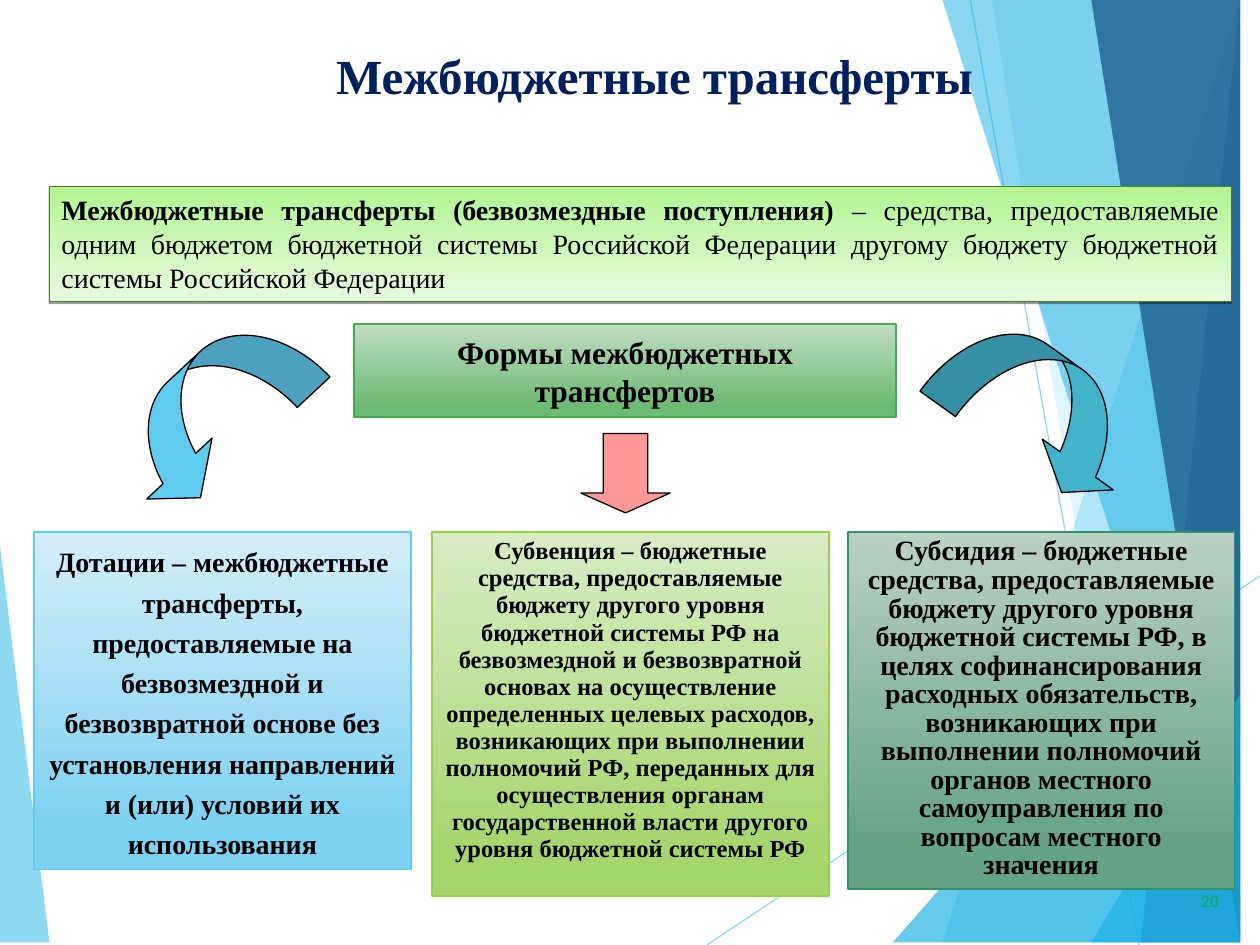
"""Build the slide on inter-budget transfers."""
from lxml import etree
from pptx import Presentation
from pptx.dml.color import RGBColor
from pptx.enum import shapes, text
from pptx.oxml.ns import qn
from pptx.util import Cm, Pt

SERIF = "Times New Roman"
W, H = 25.4, 19.05
TOP, LOW = (W, 0), (W, H)
HEX = {
    "sky": "5FCBEF", "azure": "17B0E4", "blue": "2E83C3", "deep": "226292",
    "navy": "002060", "black": "000000", "teal": "41B4CB", "pink": "FF9999",
    "green": "00B050", "lime0": "B2F591", "lime1": "E7FADF", "olive": "4A801E",
    "leaf0": "C0DDC2", "leaf1": "6DBA74", "leaf": "42B051",
    "ice0": "D4EEF9", "ice1": "7DD1F1",
    "grass0": "D8ECC5", "grass1": "A5D66C", "grass": "96D141",
    "sage0": "BAD1C4", "sage1": "65A385", "sage": "2E946B",
}
RAYS = [((14.25, H), (W, 11.61)), ((19.56, 0), (22.96, H))]
SHARDS = [
    ("sky", 70, [(0, 11.15), (1.24, H), (0, H)]),
    ("sky", 36, [(24.77, 0), (19.15, H), LOW, TOP]),
    ("sky", 20, [(20.02, 0), (23.34, H), LOW, TOP]),
    ("azure", 66, [(18.44, H), (W, 10.9), LOW]),
    ("azure", 50, [(19.48, 0), (24.64, H), LOW, TOP]),
    ("blue", 70, [(24.92, 0), (23.04, H), LOW, TOP]),
    ("deep", 82, [(22.48, 0), (25.1, H), LOW, TOP]),
    ("azure", 66, [(22.4, H), (W, 13.59), LOW]),
]
TITLE = "Межбюджетные трансферты"
TERM = [
    ("Межбюджетные трансферты (безвозмездные поступления) ", True),
    ("– средства, предоставляемые одним бюджетом бюджетной системы Российской "
     "Федерации другому бюджету бюджетной системы Российской Федерации", False),
]
FORMS = [("Формы межбюджетных трансфертов", True)]
ROW = 10.72
CARDS = [
    ((0.69, ROW, 7.59, 6.81), ("ice0", "ice1", "sky"), 16, 1.2,
     "Дотации – межбюджетные трансферты, предоставляемые на безвозмездной и "
     "безвозвратной основе без установления направлений и (или) условий их "
     "использования"),
    ((8.71, ROW, 8, 7.34), ("grass0", "grass1", "grass"), 14, 0.92,
     "Субвенция – бюджетные средства, предоставляемые бюджету другого уровня "
     "бюджетной системы РФ на безвозмездной и безвозвратной основах на "
     "осуществление определенных целевых расходов, возникающих при выполнении "
     "полномочий РФ, переданных для осуществления органам государственной "
     "власти другого уровня бюджетной системы РФ"),
    ((17.09, ROW, 7.8, 7.21), ("sage0", "sage1", "sage"), 16, 0.85,
     "Субсидия – бюджетные средства, предоставляемые бюджету другого уровня "
     "бюджетной системы РФ, в целях софинансирования расходных обязательств, "
     "возникающих при выполнении полномочий органов местного самоуправления по "
     "вопросам местного значения"),
]
KIND = shapes.MSO_SHAPE
ARROWS = [
    (KIND.CURVED_RIGHT_ARROW, (3.2, 6.1, 2.16, 4.47), 47, "sky",
     (0.417, 0.834, 0.333)),
    (KIND.CURVED_LEFT_ARROW, (19.86, 6.05, 2.26, 4.39), 305.6, "teal",
     (0.389, 0.778, 0.288)),
    (KIND.DOWN_ARROW, (11.71, 8.74, 1.8, 1.6), 0, "pink", (0.5, 0.25)),
]
MID, TOPS = text.MSO_ANCHOR.MIDDLE, text.MSO_ANCHOR.TOP
ALIGN = text.PP_ALIGN


def rgb(name):
    return RGBColor.from_string(HEX[name])


def cms(box):
    return [Cm(v) for v in box]


def fade(fill, part):
    tone = fill.find(".//" + qn("a:srgbClr"))
    etree.SubElement(tone, qn("a:alpha"), val=str(part * 1000))


def stroke(line, tone, width):
    line.color.rgb = rgb(tone)
    line.width = Pt(width)


def write(shape, runs, size, tone="black", font=SERIF, align=ALIGN.CENTER,
          anchor=TOPS, space=None):
    frame = shape.text_frame
    frame.word_wrap = True
    frame.auto_size = text.MSO_AUTO_SIZE.NONE
    frame.vertical_anchor = anchor
    frame.margin_left = frame.margin_right = Cm(0.25)
    frame.margin_top = frame.margin_bottom = Cm(0.13)
    para = frame.paragraphs[0]
    para.alignment = align
    para.line_spacing = space
    for words, bold in runs:
        run = para.add_run()
        run.text = words
        run.font.size, run.font.name, run.font.bold = Pt(size), font, bold
        run.font.color.rgb = rgb(tone)


def panel(slide, box, tones, end, width=1):
    shape = slide.shapes.add_shape(KIND.RECTANGLE, *cms(box))
    shape.shadow.inherit = False
    shape.fill.gradient()
    shape.fill.gradient_angle = 270
    for stop, tone, spot in zip(shape.fill.gradient_stops, tones, (0, end)):
        stop.color.rgb = rgb(tone)
        stop.position = spot
    stroke(shape.line, tones[2], width)
    return shape


def backdrop(slide):
    for start, stop in RAYS:
        ray = slide.shapes.add_connector(
            shapes.MSO_CONNECTOR.STRAIGHT, *cms(start + stop))
        stroke(ray.line, "sky", 0.75)
        props = ray._element.spPr
        fade(props, 70)
        etree.SubElement(props, qn("a:effectLst"))
    for tone, part, spots in SHARDS:
        pen = slide.shapes.build_freeform(*spots[0], scale=Cm(1))
        pen.add_line_segments(spots[1:], close=True)
        shard = pen.convert_to_shape()
        shard.shadow.inherit = False
        shard.fill.solid()
        shard.fill.fore_color.rgb = rgb(tone)
        fade(shard._element.spPr, part)
        shard.line.fill.background()


def drop(shape):
    glow = etree.SubElement(
        shape._element.spPr.find(qn("a:effectLst")), qn("a:outerShdw"),
        blurRad="0", dist=str(Pt(1.6)), dir="5400000", rotWithShape="0")
    tone = etree.SubElement(glow, qn("a:srgbClr"), val=HEX["black"])
    etree.SubElement(tone, qn("a:alpha"), val="38000")


def main():
    deck = Presentation()
    deck.slide_width, deck.slide_height = Cm(W), Cm(H)
    slide = deck.slides.add_slide(deck.slide_layouts[5])
    backdrop(slide)

    title = slide.shapes.title
    slide.shapes._spTree.append(title._element)
    title.left, title.top, title.width, title.height = cms(
        (3.38, 0.79, 19.63, 1.45))
    write(title, [(TITLE, True)], 28, "navy", anchor=MID)

    term = panel(slide, (0.99, 3.76, 23.83, 2.31),
                 ("lime0", "lime1", "olive"), 1, 0.5)
    drop(term)
    write(term, TERM, 16, align=ALIGN.JUSTIFY)

    forms = panel(slide, (7.14, 6.53, 10.92, 1.88),
                  ("leaf0", "leaf1", "leaf"), 0.88)
    write(forms, FORMS, 18, anchor=MID)

    for kind, box, turn, tone, bends in ARROWS:
        arrow = slide.shapes.add_shape(kind, *cms(box))
        arrow.shadow.inherit = False
        arrow.rotation = turn
        for i, bend in enumerate(bends):
            arrow.adjustments[i] = bend
        arrow.fill.solid()
        arrow.fill.fore_color.rgb = rgb(tone)
        stroke(arrow.line, "black", 0.75)

    for box, tones, size, space, words in CARDS:
        card = panel(slide, box, tones, 0.88)
        write(card, [(words, True)], size, space=space)

    page = slide.shapes.add_textbox(*cms((19.74, 17.65, 5.08, 1.02)))
    write(page, [("20", False)], 9, "green", "Roboto", ALIGN.RIGHT, MID)
    deck.save("out.pptx")


if __name__ == "__main__":
    main()
